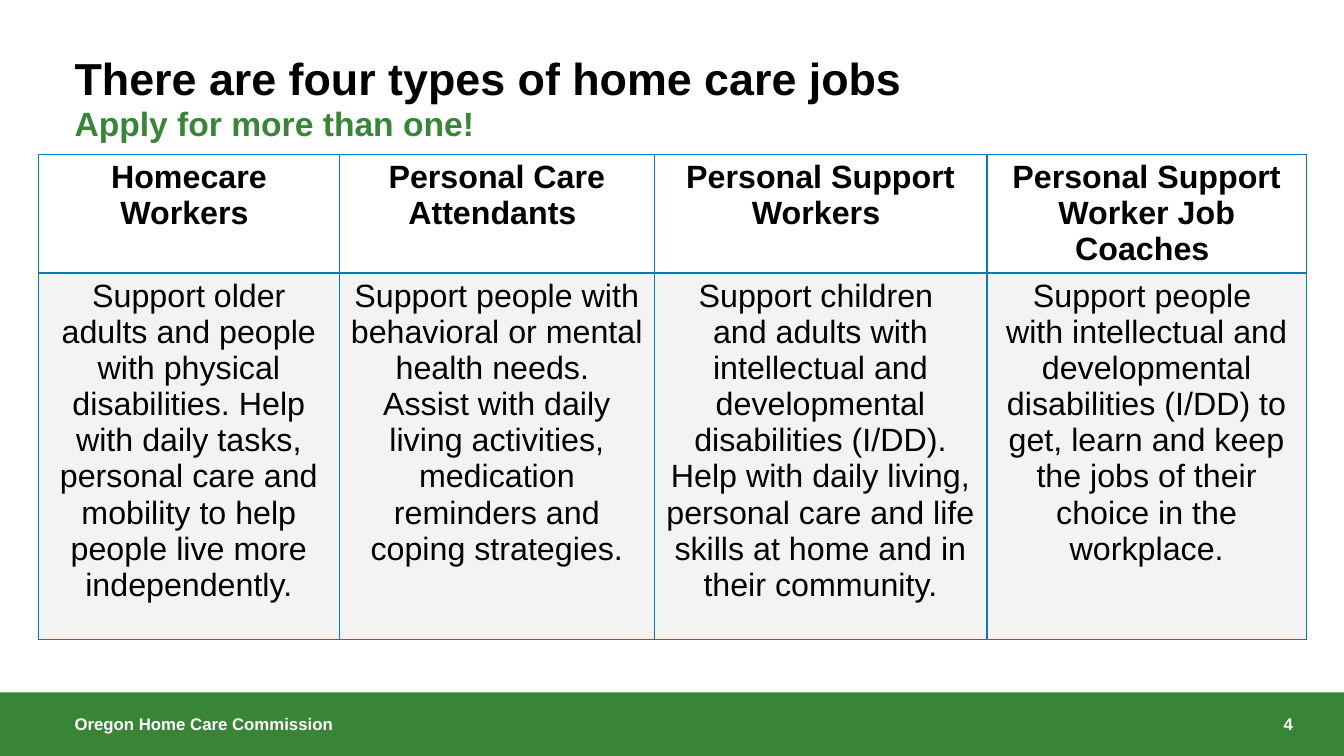
from dataclasses import dataclass

from lxml.etree import SubElement
from pptx import Presentation
from pptx.dml.color import RGBColor
from pptx.enum.shapes import MSO_SHAPE
from pptx.enum.text import MSO_ANCHOR, MSO_AUTO_SIZE, PP_ALIGN
from pptx.oxml.ns import qn
from pptx.util import Inches, Pt


@dataclass(frozen=True)
class Theme:
    font: str = "Arial"
    green: str = "388538"
    blue: str = "007BBD"
    grey: str = "F3F3F3"
    black: str = "000000"
    white: str = "FFFFFF"
    title_size: int = 32
    subtitle_size: int = 24
    table_size: int = 23
    footer_size: int = 12
    thin_border: int = 1
    thick_border: int = 2


@dataclass(frozen=True)
class Box:
    left: float
    top: float
    width: float
    height: float

    def lengths(self) -> tuple:
        return tuple(Inches(v) for v in (self.left, self.top, self.width, self.height))


@dataclass(frozen=True)
class Label:
    text: str
    box: Box
    size: int
    color: str
    anchor: MSO_ANCHOR = MSO_ANCHOR.TOP
    line_spacing: float = 1.0


@dataclass(frozen=True)
class Job:
    name: str
    duties: str
    width: float


THEME = Theme()
SLIDE_WIDTH, SLIDE_HEIGHT = 13.33, 7.5
FOOTER_TOP, FOOTER_HEIGHT = 6.87, 0.63
MARGIN = 0.74
HEADER_HEIGHT, DUTIES_HEIGHT = 1.16, 3.64

TITLE = Label("There are four types of home care jobs", Box(MARGIN, 0.56, 11.89, 0.97),
              THEME.title_size, THEME.black, line_spacing=0.9)
LABELS = [
    Label("Apply for more than one!", Box(MARGIN, 1.05, 11.86, 0.71),
          THEME.subtitle_size, THEME.green, line_spacing=0.95),
    Label("Oregon Home Care Commission", Box(MARGIN, FOOTER_TOP, 2.97, FOOTER_HEIGHT),
          THEME.footer_size, THEME.white, MSO_ANCHOR.MIDDLE),
    Label("4", Box(12.73, FOOTER_TOP, 0.59, FOOTER_HEIGHT),
          THEME.footer_size, THEME.white, MSO_ANCHOR.MIDDLE),
]
# In duties, \n starts a paragraph and \v breaks a line.
JOBS = [
    Job("Homecare Workers ",
        "Support older adults and people with physical disabilities. Help with daily tasks, "
        "personal care and mobility to help people live more independently.", 2.99),
    Job("Personal Care Attendants ",
        "Support people with behavioral or mental health needs. \n"
        "Assist with daily living activities, medication reminders and coping strategies.", 3.12),
    Job("Personal Support Workers ",
        "Support children \vand adults with intellectual and developmental disabilities (I/DD). "
        "Help with daily living, personal care and life skills at home and in their community.",
        3.3),
    Job("Personal Support Worker Job Coaches ",
        "Support people \vwith intellectual and developmental disabilities (I/DD) to get, learn "
        "and keep the jobs of their choice in the workplace.", 3.17),
]


def format_text(frame, size: int, color: str, bold: bool, align: PP_ALIGN,
                line_spacing: float = 1.0) -> None:
    font_format = {"name": THEME.font, "size": Pt(size), "bold": bold}
    for paragraph in frame.paragraphs:
        paragraph.alignment = align
        paragraph.line_spacing = line_spacing
        for run in paragraph.runs:
            for attribute, value in font_format.items():
                setattr(run.font, attribute, value)
            run.font.color.rgb = RGBColor.from_string(color)


def fill_label(shape, label: Label) -> None:
    shape.left, shape.top, shape.width, shape.height = label.box.lengths()
    frame = shape.text_frame
    frame_format = {"word_wrap": True, "auto_size": MSO_AUTO_SIZE.NONE,
                    "vertical_anchor": label.anchor, "margin_left": 0, "margin_top": 0,
                    "margin_right": 0, "margin_bottom": 0}
    for attribute, value in frame_format.items():
        setattr(frame, attribute, value)
    frame.text = label.text
    format_text(frame, label.size, label.color, True, PP_ALIGN.LEFT, label.line_spacing)


def add_footer_band(slide) -> None:
    band = slide.shapes.add_shape(
        MSO_SHAPE.RECTANGLE, *Box(0, FOOTER_TOP, SLIDE_WIDTH, FOOTER_HEIGHT).lengths())
    band.shadow.inherit = False
    band.fill.solid()
    band.fill.fore_color.rgb = RGBColor.from_string(THEME.green)
    band.line.fill.background()


def set_borders(cell, thick_side: str) -> None:
    properties = cell._tc.get_or_add_tcPr()
    for side in ("lnL", "lnR", "lnT", "lnB"):
        width = THEME.thick_border if side == thick_side else THEME.thin_border
        border = SubElement(properties, qn(f"a:{side}"), w=str(Pt(width)))
        SubElement(SubElement(border, qn("a:solidFill")), qn("a:srgbClr"), val=THEME.blue)


def fill_cell(cell, text: str, is_header: bool) -> None:
    cell.text = text
    format_text(cell.text_frame, THEME.table_size, THEME.black, is_header, PP_ALIGN.CENTER)
    set_borders(cell, "lnB" if is_header else "lnT")
    if is_header:
        cell.fill.background()
    else:
        cell.fill.solid()
        cell.fill.fore_color.rgb = RGBColor.from_string(THEME.grey)


def add_job_table(slide) -> None:
    box = Box(0.38, 1.53, sum(job.width for job in JOBS), HEADER_HEIGHT + DUTIES_HEIGHT)
    table = slide.shapes.add_table(2, len(JOBS), *box.lengths()).table
    table.horz_banding = False
    table.rows[0].height = Inches(HEADER_HEIGHT)
    table.rows[1].height = Inches(DUTIES_HEIGHT)
    for column, job in enumerate(JOBS):
        table.columns[column].width = Inches(job.width)
        fill_cell(table.cell(0, column), job.name, True)
        fill_cell(table.cell(1, column), job.duties, False)


def main() -> None:
    presentation = Presentation()
    presentation.slide_width = Inches(SLIDE_WIDTH)
    presentation.slide_height = Inches(SLIDE_HEIGHT)
    slide = presentation.slides.add_slide(presentation.slide_layouts[5])
    fill_label(slide.shapes.title, TITLE)
    add_footer_band(slide)
    add_job_table(slide)
    for label in LABELS:
        fill_label(slide.shapes.add_textbox(*label.box.lengths()), label)
    presentation.save("out.pptx")


if __name__ == "__main__":
    main()
